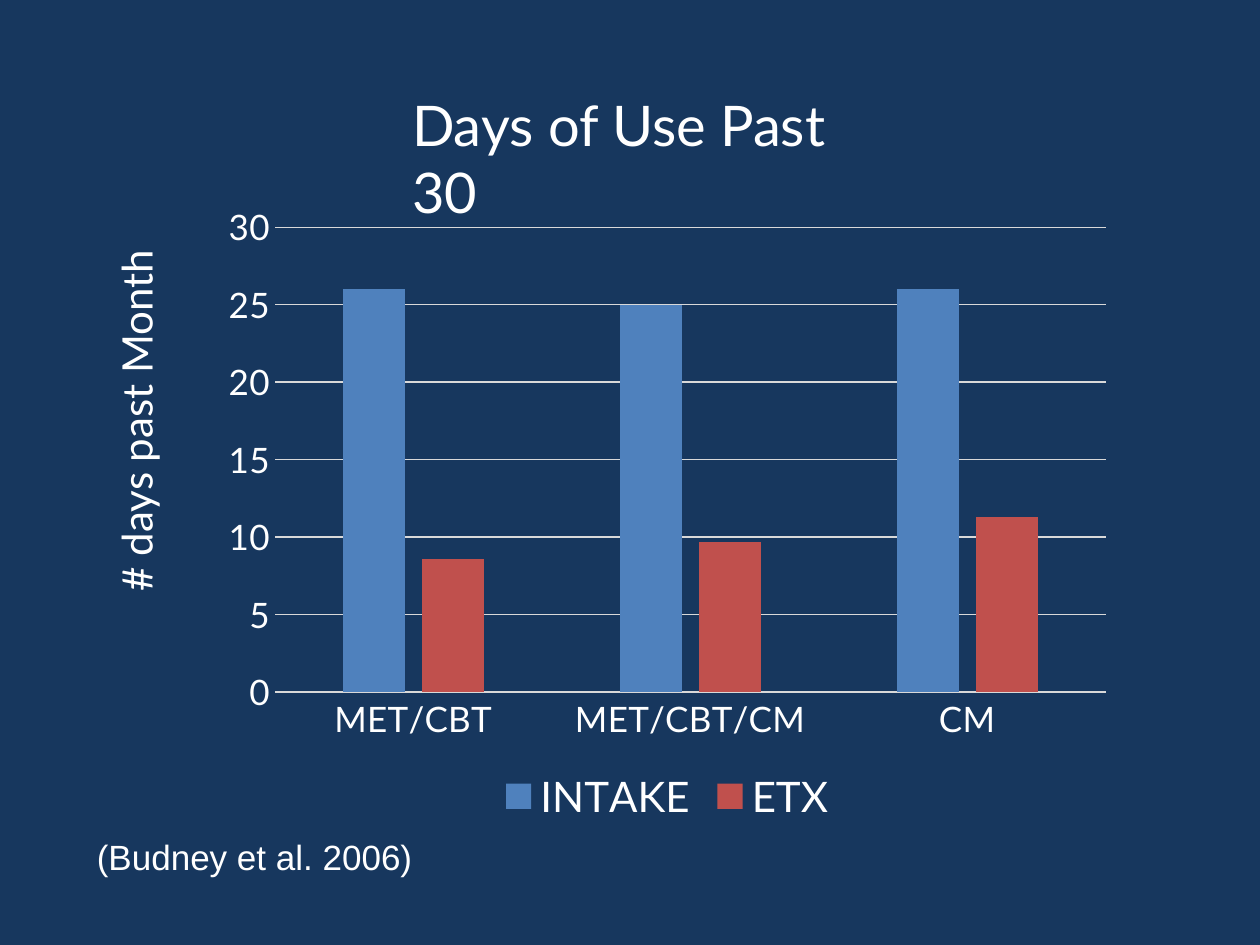
from dataclasses import dataclass

import pptx
import pptx.chart.data
import pptx.dml.color
import pptx.enum.chart
import pptx.enum.text
import pptx.util
from pptx.util import Inches

NAVY = pptx.dml.color.RGBColor(0x17, 0x37, 0x5E)
WHITE = pptx.dml.color.RGBColor(0xFF, 0xFF, 0xFF)
GRID = pptx.dml.color.RGBColor(0xD9, 0xD9, 0xD9)
BLUE = pptx.dml.color.RGBColor(0x4F, 0x81, 0xBD)
RED = pptx.dml.color.RGBColor(0xC0, 0x50, 0x4D)


@dataclass
class Label:
    text: str
    left: float
    top: float
    width: float
    height: float
    size: int
    font: str = "Lato"
    rotation: int = 0


@dataclass
class Measure:
    name: str
    values: tuple[float, ...]
    color: pptx.dml.color.RGBColor


TITLE = Label("Days of Use Past 30", 3.17, 0.67, 4, 0.64, 32)
LABELS = [
    Label("(Budney et al. 2006)", 0.67, 6.58, 9, 0.44, 20, "Arial"),
    Label("# days past Month", -0.5, 2.96, 3.16, 0.5, 24, rotation=270),
]
TREATMENTS = ["MET/CBT", "MET/CBT/CM", "CM"]
MEASURES = [
    Measure("INTAKE", (26, 25, 26), BLUE),
    Measure("ETX", (8.6, 9.7, 11.3), RED),
]


def style_font(font, size: int, name: str = "Lato") -> None:
    font.size = pptx.util.Pt(size)
    font.name = name
    font.color.rgb = WHITE


def fill_label(box, label: Label) -> None:
    """Place a text box or placeholder and write the label in it."""
    box.left, box.top = Inches(label.left), Inches(label.top)
    box.width, box.height = Inches(label.width), Inches(label.height)
    box.rotation = label.rotation
    frame = box.text_frame
    frame.word_wrap = True
    frame.auto_size = pptx.enum.text.MSO_AUTO_SIZE.NONE
    frame.vertical_anchor = pptx.enum.text.MSO_ANCHOR.TOP
    para = frame.paragraphs[0]
    para.alignment = pptx.enum.text.PP_ALIGN.LEFT
    span = para.add_run()
    span.text = label.text
    style_font(span.font, label.size, label.font)


def style_axis(axis) -> None:
    axis.major_tick_mark = pptx.enum.chart.XL_TICK_MARK.NONE
    axis.minor_tick_mark = pptx.enum.chart.XL_TICK_MARK.NONE
    style_font(axis.tick_labels.font, 20)


def style_line(line) -> None:
    line.color.rgb = GRID
    line.width = pptx.util.Pt(0.75)


def add_days_chart(page) -> None:
    data = pptx.chart.data.CategoryChartData()
    data.categories = TREATMENTS
    for measure in MEASURES:
        data.add_series(measure.name, measure.values)
    chart = page.shapes.add_chart(
        pptx.enum.chart.XL_CHART_TYPE.COLUMN_CLUSTERED,
        Inches(1.67), Inches(1.53), Inches(7.25), Inches(5.06), data,
    ).chart
    chart.has_title = False
    style_font(chart.font, 10)

    plot = chart.plots[0]
    plot.gap_width = 219
    plot.overlap = -27
    plot.vary_by_categories = False
    for series, measure in zip(plot.series, MEASURES):
        series.format.fill.solid()
        series.format.fill.fore_color.rgb = measure.color

    style_axis(chart.category_axis)
    style_line(chart.category_axis.format.line)
    value_axis = chart.value_axis
    style_axis(value_axis)
    value_axis.minimum_scale, value_axis.maximum_scale = 0, 30
    value_axis.major_unit = 5
    value_axis.format.line.fill.background()
    style_line(value_axis.major_gridlines.format.line)

    chart.has_legend = True
    chart.legend.position = pptx.enum.chart.XL_LEGEND_POSITION.BOTTOM
    chart.legend.include_in_layout = False
    style_font(chart.legend.font, 24)


def main() -> None:
    deck = pptx.Presentation()
    deck.slide_width, deck.slide_height = Inches(10), Inches(7.5)
    page = deck.slides.add_slide(deck.slide_layouts.get_by_name("Title Only"))
    page.background.fill.solid()
    page.background.fill.fore_color.rgb = NAVY
    add_days_chart(page)
    fill_label(page.shapes.title, TITLE)
    for label in LABELS:
        box = page.shapes.add_textbox(0, 0, 0, 0)
        fill_label(box, label)
    deck.save("out.pptx")


if __name__ == "__main__":
    main()
